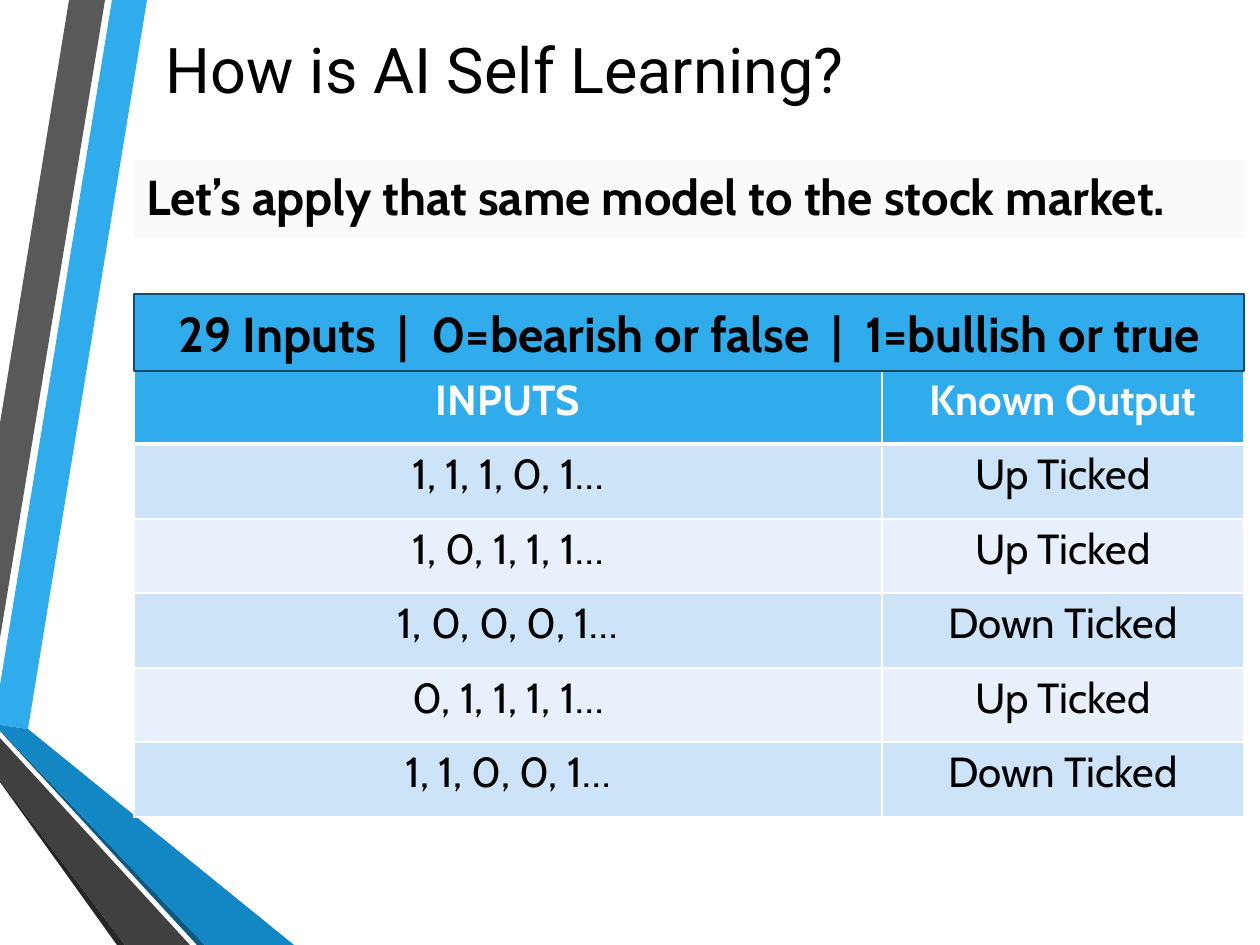
import lxml.etree
import pptx
import pptx.dml.color
import pptx.enum.shapes
import pptx.enum.text
import pptx.oxml
import pptx.oxml.ns
import pptx.util

PX = 914400 // 126
qn = pptx.oxml.ns.qn
ALIGN = pptx.enum.text.PP_ALIGN
ANCHOR = pptx.enum.text.MSO_ANCHOR


def paint(fmt, color):
    """Give a fill or line format a solid hex colour."""
    fill = getattr(fmt, "fill", fmt)
    fill.solid()
    fill.fore_color.rgb = pptx.dml.color.RGBColor.from_string(color)


def write(tf, text, size, font, color="000000", bold=False, align=ALIGN.CENTER):
    tf.text = text
    p = tf.paragraphs[0]
    p.alignment = align
    f = p.runs[0].font
    f.size, f.name, f.bold = pptx.util.Pt(size), font, bold
    paint(f, color)


prs = pptx.Presentation()
prs.slide_width, prs.slide_height = 1260 * PX, 945 * PX
s = prs.slides.add_slide(prs.slide_layouts[6])

# Folded ribbons down the left edge
ribbons = [
    ("30ACEC", [(0, 685), (0, 725), (28, 729), (147, 0), (112, 0)]),
    ("595959", [(105, 0), (69, 0), (0, 423), (0, 638)]),
    ("262626", [(0, 780), (0, 782), (117, 945), (125, 945)]),
    ("0C5A82", [(0, 730), (0, 731), (197, 945), (205, 945)]),
    ("1287C3", [(0, 730), (205, 945), (294, 945), (28, 729), (0, 725)]),
    ("404040", [(0, 780), (125, 945), (190, 945), (0, 738)]),
]
for color, points in ribbons:
    fb = s.shapes.build_freeform(*points[0], scale=PX)
    fb.add_line_segments(points[1:], close=True)
    sp = fb.convert_to_shape()
    sp.shadow.inherit = False
    paint(sp.fill, color)
    sp.line.fill.background()

# Title
tf = s.shapes.add_textbox(73 * PX, 30 * PX, 1137 * PX, 77 * PX).text_frame
tf.word_wrap = True
tf.margin_left = 93 * PX
tf.vertical_anchor = ANCHOR.MIDDLE
write(tf, "How is AI Self Learning?", 36, "Roboto", align=ALIGN.LEFT)

# Table of inputs and outputs
rows = [
    ("INPUTS", "Known Output"),
    ("1, 1, 1, 0, 1…", "Up Ticked"),
    ("1, 0, 1, 1, 1…", "Up Ticked"),
    ("1, 0, 0, 0, 1…", "Down Ticked"),
    ("0, 1, 1, 1, 1…", "Up Ticked"),
    ("1, 1, 0, 0, 1…", "Down Ticked"),
]
left, width = 134, 1110
table = s.shapes.add_table(len(rows), 2, left * PX, 370 * PX, width * PX, 447 * PX).table
for col, w in zip(table.columns, (748, 362)):
    col.width = w * PX
for i, row in enumerate(rows):
    table.rows[i].height = (74 + i % 2) * PX
    header = i == 0
    for j, text in enumerate(row):
        cell = table.cell(i, j)
        cell.margin_left = cell.margin_right = 9 * PX
        cell.margin_top = cell.margin_bottom = 5 * PX
        write(cell.text_frame, text, 24, "Cabin", "FFFFFF" if header else "000000", header)
        tcPr = cell._tc.get_or_add_tcPr()
        for side in ("L", "R", "T", "B"):
            thick = (side == "B" and i == 0) or (side == "T" and i == 1)
            ln = lxml.etree.SubElement(tcPr, qn(f"a:ln{side}"), w=str(pptx.util.Pt(3 if thick else 1)))
            fill = lxml.etree.SubElement(ln, qn("a:solidFill"))
            lxml.etree.SubElement(fill, qn("a:srgbClr"), val="FFFFFF")
        paint(cell.fill, "30ACEC" if header else "CDE3F8" if i % 2 else "E8F1FB")

# Lead sentence and table banner: top, text, fill, fill %, line, line %, points, anchor, align
bars = [
    (160, "Let’s apply that same model to the stock market.",
     "A6A6A6", 5, "FFFFFF", 20, 0.25, ANCHOR.TOP, ALIGN.LEFT),
    (294, "29 Inputs  |  0=bearish or false  |  1=bullish or true",
     "30ACEC", 100, "154B67", 100, 1.25, ANCHOR.MIDDLE, ALIGN.CENTER),
]
for top, text, color, fill_pct, line_color, line_pct, weight, anchor, align in bars:
    sp = s.shapes.add_shape(pptx.enum.shapes.MSO_SHAPE.RECTANGLE,
                            left * PX, top * PX, width * PX, 77 * PX)
    sp.shadow.inherit = False
    paint(sp.fill, color)
    paint(sp.line, line_color)
    sp.line.width = pptx.util.Pt(weight)
    for clr, pct in zip(sp._element.spPr.iter(qn("a:srgbClr")), (fill_pct, line_pct)):
        if pct < 100:
            lxml.etree.SubElement(clr, qn("a:alpha"), val=str(pct * 1000))
    tf = sp.text_frame
    tf.word_wrap = True
    tf.vertical_anchor = anchor
    write(tf, text, 28, "Cabin", bold=True, align=align)

prs.save("out.pptx")
